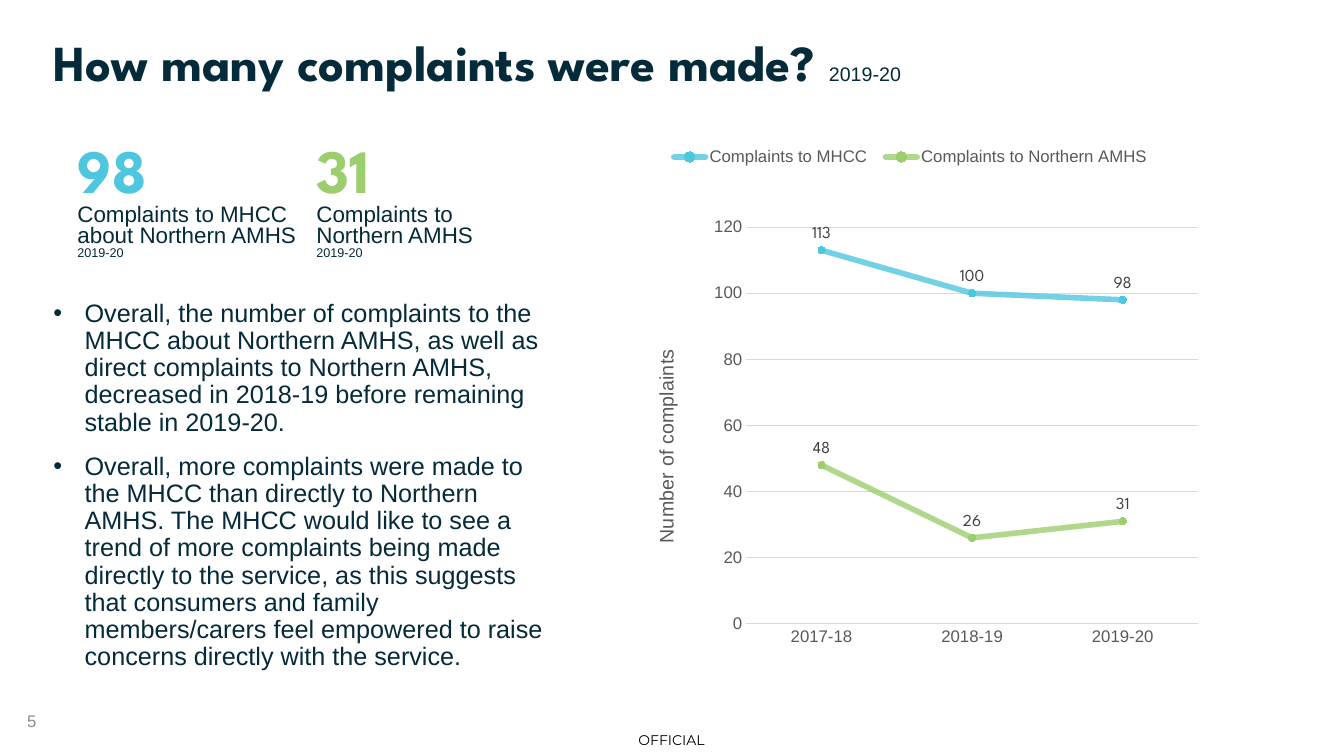
from dataclasses import dataclass

from lxml import etree
from pptx import Presentation
from pptx import util as u
from pptx.chart.data import CategoryChartData
from pptx.dml.color import RGBColor
from pptx.enum import chart as charts, text
from pptx.oxml.ns import qn


@dataclass(frozen=True)
class Theme:
    heading: str = "League Spartan"
    body: str = "Arial"
    marking: str = "Montserrat"
    navy: str = "052A39"
    blue: str = "4FC6DF"
    green: str = "9DCE6E"
    black: str = "000000"
    label: str = "404040"
    axis: str = "595959"
    number: str = "8C8C8C"
    grid: str = "D9D9D9"
    title_size: int = 36
    figure_size: int = 44
    list_size: int = 18
    caption_size: int = 16
    axis_title_size: int = 14
    chart_size: int = 12
    marking_size: int = 10
    year_size: int = 9


theme = Theme()
PX = 9144  # 100 px to the inch


def style(font, size, color=theme.navy, name=theme.body, bold=False):
    font.name, font.size, font.bold = name, u.Pt(size), bold
    font.color.rgb = RGBColor.from_string(color)


def set_layout(element, index, **places):
    """Give a chart part a manual layout, in fractions of the chart."""
    for old in element.findall(qn("c:layout")):
        element.remove(old)
    layout = etree.Element(qn("c:layout"))
    manual = etree.SubElement(layout, qn("c:manualLayout"))
    for tag, value in places.items():
        etree.SubElement(manual, qn(f"c:{tag}")).set("val", str(value))
    element.insert(index, layout)


deck = Presentation()
deck.slide_width, deck.slide_height = 1333 * PX, 750 * PX
page = deck.slides.add_slide(deck.slide_layouts[1])

# Title
title = page.shapes.title
title.left, title.top, title.width, title.height = [n * PX for n in (43, 33, 1242, 93)]
title.text_frame.vertical_anchor = text.MSO_ANCHOR.TOP
title.text_frame.auto_size = text.MSO_AUTO_SIZE.NONE
para = title.text_frame.paragraphs[0]
para.alignment, para.line_spacing = text.PP_ALIGN.LEFT, 0.9
span = para.add_run()
span.text = "How many complaints were made? "
style(span.font, theme.title_size, name=theme.heading, bold=True)
span = para.add_run()
span.text = "2019-20"
style(span.font, theme.axis_title_size)

# Findings
findings = [
    "Overall, the number of complaints to the MHCC about Northern AMHS, as well as "
    "direct complaints to Northern AMHS, decreased in 2018-19 before remaining "
    "stable in 2019-20.",
    "Overall, more complaints were made to the MHCC than directly to Northern AMHS. "
    "The MHCC would like to see a trend of more complaints being made directly to "
    "the service, as this suggests that consumers and family members/carers feel "
    "empowered to raise concerns directly with the service.",
]
body = page.placeholders[1]
body.left, body.top, body.width, body.height = [n * PX for n in (43, 293, 522, 401)]
frame = body.text_frame
frame.auto_size = text.MSO_AUTO_SIZE.NONE
frame.text = "\n".join(findings)
for i, para in enumerate(frame.paragraphs):
    para.line_spacing = 0.9
    para.space_before, para.space_after = u.Pt(6 if i else 0), u.Pt(6)
    properties = para._p.get_or_add_pPr()
    properties.set("marL", str(31 * PX))
    properties.set("indent", str(-31 * PX))
    etree.SubElement(properties, qn("a:buChar")).set("char", "•")
    style(para.font, theme.list_size)

# Key figures
figures = [
    ("98", "Complaints to MHCC about Northern AMHS", theme.blue),
    ("31", "Complaints to Northern AMHS", theme.green),
]
for i, (figure, caption, color) in enumerate(figures):
    box = page.shapes.add_textbox((67 + 237 * i) * PX, 140 * PX, 237 * PX, 124 * PX)
    frame = box.text_frame
    frame.word_wrap = True
    para = frame.paragraphs[0]
    para.text, para.line_spacing = figure, 0.8
    style(para.font, theme.figure_size, color, theme.heading, bold=True)
    para = frame.add_paragraph()
    para.line_spacing = 0.8
    span = para.add_run()
    span.text = caption
    style(span.font, theme.caption_size)
    para.add_line_break()
    span = para.add_run()
    span.text = "2019-20"
    style(span.font, theme.year_size)

# Complaints by year
data = CategoryChartData()
data.categories = ["2017-18", "2018-19", "2019-20"]
data.add_series("Complaints to MHCC", [113, 100, 98])
data.add_series("Complaints to Northern AMHS", [48, 26, 31])
chart = page.shapes.add_chart(
    charts.XL_CHART_TYPE.LINE_MARKERS, 639 * PX, 126 * PX, 568 * PX, 543 * PX, data
).chart
chart.has_title = False
style(chart.font, theme.marking_size, theme.black)
plot_area = chart._chartSpace.find(f".//{qn('c:plotArea')}")
set_layout(plot_area, 0, layoutTarget="inner", xMode="edge", yMode="edge",
           x=0.178, y=0.183, w=0.789, h=0.725)

chart.has_legend = True
chart.legend.position = charts.XL_LEGEND_POSITION.BOTTOM
chart.legend.include_in_layout = False
style(chart.legend.font, theme.chart_size, theme.axis)
set_layout(chart.legend._element, 1, xMode="edge", yMode="edge",
           x=0.03, y=0.03, w=0.87, h=0.05)

grid = RGBColor.from_string(theme.grid)
years, counts = chart.category_axis, chart.value_axis
for axis in (years, counts):
    axis.major_tick_mark = axis.minor_tick_mark = charts.XL_TICK_MARK.NONE
    style(axis.tick_labels.font, theme.chart_size, theme.axis)
counts.minimum_scale, counts.maximum_scale, counts.major_unit = 0, 120, 20
counts.format.line.fill.background()
for line in (years.format.line, counts.major_gridlines.format.line):
    line.color.rgb, line.width = grid, u.Pt(0.75)

counts.has_title = True
para = counts.axis_title.text_frame.paragraphs[0]
para.text = "Number of complaints"
style(para.font, theme.axis_title_size, theme.axis)
set_layout(counts.axis_title._element, 1, xMode="edge", yMode="edge", x=0.01, y=0.4)

chart.plots[0].vary_by_categories = False
for series, color in zip(chart.plots[0].series, (theme.blue, theme.green)):
    rgb = RGBColor.from_string(color)
    series.smooth = False
    line = series.format.line
    line.color.rgb, line.width = rgb, u.Pt(4)
    stroke = series._element.find(f"{qn('c:spPr')}/{qn('a:ln')}")
    stroke.set("cap", "rnd")
    etree.SubElement(stroke.find(f".//{qn('a:srgbClr')}"), qn("a:alpha")).set("val", "80000")
    marker = series.marker
    marker.style, marker.size = charts.XL_MARKER_STYLE.CIRCLE, 5
    marker.format.fill.solid()
    marker.format.fill.fore_color.rgb = marker.format.line.color.rgb = rgb
    labels = series.data_labels
    labels.show_value = True
    labels.position = charts.XL_LABEL_POSITION.ABOVE
    style(labels.font, theme.chart_size, theme.label, theme.heading)

# Footer
number = page.shapes.add_textbox(17 * PX, 695 * PX, 300 * PX, 40 * PX).text_frame
marking = page.shapes.add_textbox(615 * PX, 719 * PX, 102 * PX, 31 * PX).text_frame
marking.margin_left = marking.margin_right = marking.margin_top = marking.margin_bottom = 0
marking.paragraphs[0].alignment = text.PP_ALIGN.CENTER
for frame, words, size, color, name in (
    (number, "5", theme.chart_size, theme.number, theme.body),
    (marking, "OFFICIAL", theme.marking_size, theme.black, theme.marking),
):
    frame.word_wrap = True
    frame.vertical_anchor = text.MSO_ANCHOR.MIDDLE
    frame.paragraphs[0].text = words
    style(frame.paragraphs[0].font, size, color, name)

deck.save("out.pptx")
